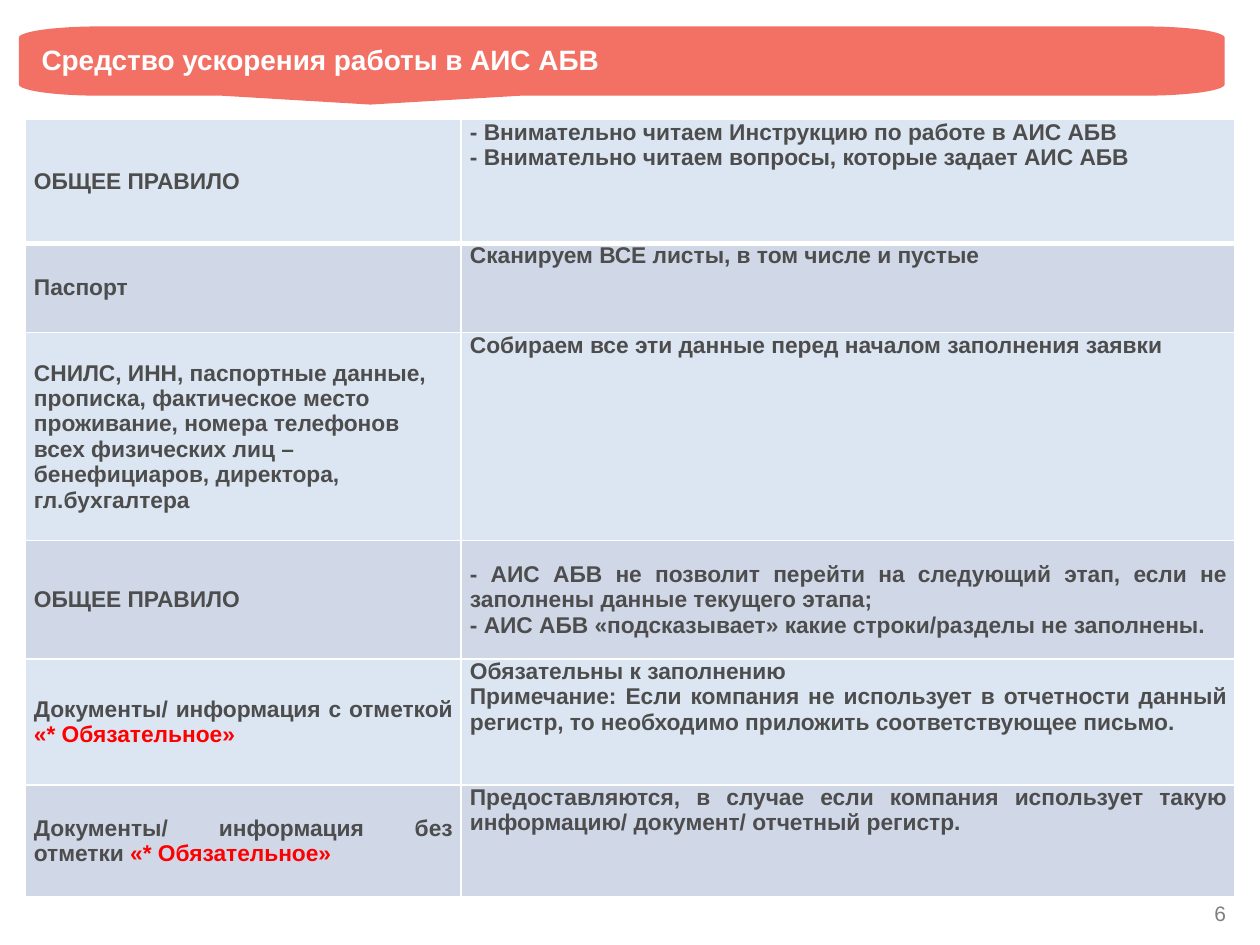
from math import cos, radians, sin

from lxml.etree import SubElement
from pptx import Presentation
from pptx.dml.color import RGBColor
from pptx.enum.text import MSO_ANCHOR, MSO_AUTO_SIZE, PP_ALIGN
from pptx.oxml.ns import qn
from pptx.util import Inches, Pt

WIDTH, HEIGHT = Inches(10), Inches(7.5)
COLORS = {
    "banner": "F37065", "white": "FFFFFF", "text": "4D4D4D", "accent": "FF0000",
    "number": "808080", "light": "DCE6F2", "dark": "D0D8E8",
}
MARK = "«* Обязательное»"
COLUMN_SHARES = [34.6, 61.4]
LEFT, JUSTIFY = PP_ALIGN.LEFT, PP_ALIGN.JUSTIFY
TOP, MIDDLE = MSO_ANCHOR.TOP, MSO_ANCHOR.MIDDLE
ROWS = [
    (13.07, JUSTIFY, TOP, "ОБЩЕЕ ПРАВИЛО",
     ["- Внимательно читаем Инструкцию по работе в АИС АБВ",
      "- Внимательно читаем вопросы, которые задает АИС АБВ"]),
    (9.47, JUSTIFY, TOP, "Паспорт", ["Сканируем ВСЕ листы, в том числе и пустые"]),
    (22, LEFT, TOP,
     "СНИЛС, ИНН, паспортные данные, прописка, фактическое место проживание, номера телефонов "
     "всех физических лиц – бенефициаров, директора, гл.бухгалтера",
     ["Собираем все эти данные перед началом заполнения заявки"]),
    (12.53, LEFT, MIDDLE, "ОБЩЕЕ ПРАВИЛО",
     ["- АИС АБВ не позволит перейти на следующий этап, если не заполнены данные текущего этапа;",
      "- АИС АБВ «подсказывает» какие строки/разделы не заполнены."]),
    (13.33, JUSTIFY, TOP, f"Документы/ информация с отметкой {MARK}",
     ["Обязательны к заполнению",
      "Примечание: Если компания не использует в отчетности данный регистр, "
      "то необходимо приложить соответствующее письмо."]),
    (11.87, JUSTIFY, TOP, f"Документы/ информация без отметки {MARK}",
     ["Предоставляются, в случае если компания использует такую информацию/ документ/ "
      "отчетный регистр."]),
]


def across(percent):
    """Return a share of the slide width."""
    return round(WIDTH * percent / 100)


def down(percent):
    """Return a share of the slide height."""
    return round(HEIGHT * percent / 100)


def box(left, top, width, height):
    """Return a frame given in percent of the slide."""
    return across(left), down(top), across(width), down(height)


def apply(target, **values):
    """Set each named value on the target."""
    for name, value in values.items():
        setattr(target, name, value)


def add_run(paragraph, text, size, color, bold=True):
    """Append a formatted run to a paragraph."""
    run = paragraph.add_run()
    run.text = text
    apply(run.font, name="Arial", size=Pt(size), bold=bold)
    run.font.color.rgb = RGBColor.from_string(COLORS[color])


def add_banner(slide, left, top, width, height):
    """Draw a bar with elliptical corners and a shallow pointer below."""
    radius_x, radius_y = across(6.4), down(1.2)
    right, bottom = left + width, top + height
    corners = [
        (left + radius_x, top + radius_y, 180), (right - radius_x, top + radius_y, 270),
        (right - radius_x, bottom - radius_y, 0), (left + radius_x, bottom - radius_y, 90),
    ]
    arcs = [
        [(round(x + radius_x * cos(radians(start + step))),
          round(y + radius_y * sin(radians(start + step)))) for step in range(0, 91, 5)]
        for x, y, start in corners
    ]
    pointer = [(across(41.4), bottom), (across(29.4), down(11.07)), (across(17.5), bottom)]
    points = arcs[0] + arcs[1] + arcs[2] + pointer + arcs[3]
    builder = slide.shapes.build_freeform(*points[0])
    builder.add_line_segments(points[1:], close=True)
    shape = builder.convert_to_shape()
    shape.shadow.inherit = False
    shape.fill.solid()
    shape.fill.fore_color.rgb = RGBColor.from_string(COLORS["banner"])
    shape.line.fill.background()


def set_title(slide, text, frame):
    """Place the title placeholder in front of the banner."""
    title = slide.shapes.title
    apply(title, **dict(zip(("left", "top", "width", "height"), frame)))
    apply(title.text_frame, word_wrap=True, auto_size=MSO_AUTO_SIZE.NONE,
          vertical_anchor=MIDDLE, margin_left=Inches(0.18), margin_right=Inches(0.18),
          margin_top=0, margin_bottom=0)
    paragraph = title.text_frame.paragraphs[0]
    apply(paragraph, alignment=LEFT, line_spacing=0.9)
    add_run(paragraph, text, 16, "white")
    slide.shapes.element.append(title.element)


def set_borders(cell, top, bottom):
    """Give a cell white borders with the stated widths in points."""
    properties = cell._tc.get_or_add_tcPr()
    for tag, width in (("lnL", 1), ("lnR", 1), ("lnT", top), ("lnB", bottom)):
        line = SubElement(properties, qn(f"a:{tag}"), w=str(Pt(width)))
        fill = SubElement(line, qn("a:solidFill"))
        SubElement(fill, qn("a:srgbClr"), val=COLORS["white"])


def fill_cell(cell, lines, alignment, anchor, color):
    """Write the lines of a cell and colour it."""
    apply(cell, vertical_anchor=anchor, margin_left=Inches(0.07),
          margin_right=Inches(0.07), margin_top=0, margin_bottom=0)
    for index, line in enumerate(lines):
        frame = cell.text_frame
        paragraph = frame.add_paragraph() if index else frame.paragraphs[0]
        paragraph.alignment = alignment
        plain, mark, _ = line.partition(MARK)
        add_run(paragraph, plain, 13, "text")
        if mark:
            add_run(paragraph, mark, 13, "accent")
    cell.fill.solid()
    cell.fill.fore_color.rgb = RGBColor.from_string(COLORS[color])


def add_rules_table(slide, left, top):
    """Add the two-column table of rules."""
    height = sum(row[0] for row in ROWS)
    frame = box(left, top, sum(COLUMN_SHARES), height)
    table = slide.shapes.add_table(len(ROWS), len(COLUMN_SHARES), *frame).table
    for column, share in zip(table.columns, COLUMN_SHARES):
        column.width = across(share)
    for index, (share, alignment, anchor, subject, advice) in enumerate(ROWS):
        table.rows[index].height = down(share)
        cells = table.cell(index, 0), table.cell(index, 1)
        for cell in cells:
            set_borders(cell, 3 if index == 1 else 1, 3 if index == 0 else 1)
        color = "dark" if index % 2 else "light"
        fill_cell(cells[0], [subject], alignment, MIDDLE, color)
        fill_cell(cells[1], advice, JUSTIFY, anchor, color)


def add_page_number(slide, text, frame):
    """Add the page number in the lower right corner."""
    text_frame = slide.shapes.add_textbox(*frame).text_frame
    apply(text_frame, word_wrap=True, margin_left=0, margin_right=0,
          margin_top=0, margin_bottom=0)
    paragraph = text_frame.paragraphs[0]
    apply(paragraph, alignment=PP_ALIGN.RIGHT, line_spacing=Pt(12.7))
    add_run(paragraph, text, 12, "number", bold=False)


def main():
    """Build the slide and save it."""
    presentation = Presentation()
    apply(presentation, slide_width=WIDTH, slide_height=HEIGHT)
    slide = presentation.slides.add_slide(presentation.slide_layouts[5])
    banner = box(1.5, 2.8, 95.7, 7.33)
    add_page_number(slide, "6", box(94.2, 95.6, 3.1, 2.13))
    add_rules_table(slide, 2, 12.67)
    add_banner(slide, *banner)
    set_title(slide, "Средство ускорения работы в АИС АБВ", banner)
    presentation.save("out.pptx")


if __name__ == "__main__":
    main()
